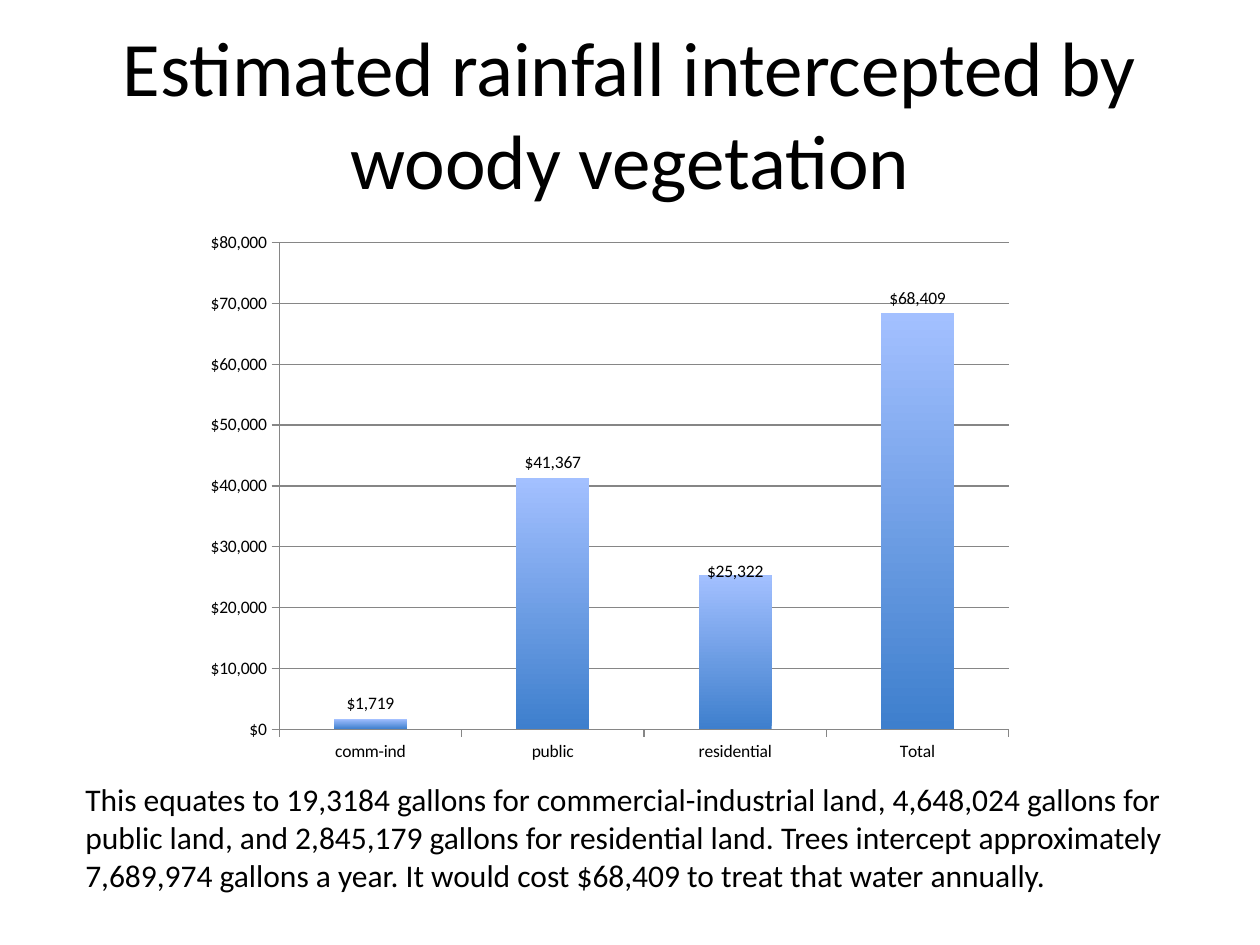
import pptx
import pptx.chart.data
import pptx.dml.color
import pptx.enum.chart
import pptx.enum.text
import pptx.oxml
import pptx.oxml.ns
import pptx.util

FONT = "Calibri"
BLACK = "000000"
AXIS_GREY = "868686"
BAR_BOTTOM = "3E7FCD"
BAR_TOP = "A3C0FF"
DOLLARS = '"$"#,##0'
TITLE = "Estimated rainfall intercepted by woody vegetation"
SUMMARY = (
    "This equates to 19,3184 gallons for commercial-industrial land, "
    "4,648,024 gallons for public land, and 2,845,179 gallons for residential land. "
    "Trees intercept approximately 7,689,974 gallons a year. "
    "It would cost $68,409 to treat that water annually."
)
TREATMENT_COSTS = {"comm-ind": 1719, "public": 41367, "residential": 25322, "Total": 68409}


def colour(hex_text):
    """Turn a hex string into a colour."""
    return pptx.dml.color.RGBColor.from_string(hex_text)


def lengths(box):
    """Turn a left, top, width, height box in centimetres into lengths."""
    return [pptx.util.Cm(value) for value in box]


def format_font(font, size, hex_text=BLACK):
    """Set the typeface, size and colour of a font."""
    font.name = FONT
    font.size = pptx.util.Pt(size)
    font.color.rgb = colour(hex_text)


def write_text(frame, text, size, align, anchor):
    """Fill a text frame with one formatted paragraph."""
    frame.word_wrap = True
    frame.vertical_anchor = anchor
    para = frame.paragraphs[0]
    para.alignment = align
    span = para.add_run()
    span.text = text
    format_font(span.font, size)


def place_title(page, box):
    """Move the title placeholder to the box and write the title."""
    title = page.shapes.title
    title.left, title.top, title.width, title.height = lengths(box)
    write_text(title.text_frame, TITLE, size=44,
               align=pptx.enum.text.PP_ALIGN.CENTER,
               anchor=pptx.enum.text.MSO_ANCHOR.MIDDLE)


def format_axes(chart):
    """Format both axes and the gridlines."""
    costs = chart.value_axis
    costs.minimum_scale, costs.maximum_scale, costs.major_unit = 0, 80000, 10000
    costs.has_major_gridlines = True
    costs.tick_labels.number_format = DOLLARS
    costs.tick_labels.number_format_is_linked = False
    for axis in (costs, chart.category_axis):
        axis.major_tick_mark = pptx.enum.chart.XL_TICK_MARK.OUTSIDE
    for line in (costs.format.line, chart.category_axis.format.line,
                 costs.major_gridlines.format.line):
        line.color.rgb = colour(AXIS_GREY)
        line.width = pptx.util.Pt(0.75)


def format_bars(series):
    """Give the bars a vertical gradient and dollar labels."""
    fill = series.format.fill
    fill.gradient()
    fill.gradient_angle = 90
    for stop, hex_text in zip(fill.gradient_stops, (BAR_BOTTOM, BAR_TOP)):
        stop.color.rgb = colour(hex_text)
    labels = series.data_labels
    labels.show_value = True
    labels.number_format = DOLLARS
    labels.number_format_is_linked = False
    labels.position = pptx.enum.chart.XL_LABEL_POSITION.OUTSIDE_END
    format_font(labels.font, 10)


def lower_label(series, index, shift):
    """Move one data label down by a fraction of the chart height."""
    label = series.points[index].data_label
    label.position = pptx.enum.chart.XL_LABEL_POSITION.OUTSIDE_END
    format_font(label.font, 10)
    layout = pptx.oxml.parse_xml(
        f'<c:layout {pptx.oxml.ns.nsdecls("c")}><c:manualLayout>'
        f'<c:x val="0"/><c:y val="{shift}"/></c:manualLayout></c:layout>')
    series._element.xpath(f"c:dLbls/c:dLbl/c:idx[@val='{index}']")[0].addnext(layout)


def place_chart(page, box):
    """Draw the treatment cost columns in the box."""
    data = pptx.chart.data.CategoryChartData(number_format=DOLLARS)
    data.categories = list(TREATMENT_COSTS)
    data.add_series("Series 1", list(TREATMENT_COSTS.values()))
    kind = pptx.enum.chart.XL_CHART_TYPE.COLUMN_CLUSTERED
    chart = page.shapes.add_chart(kind, *lengths(box), data).chart
    chart.has_legend = False
    chart.has_title = False
    format_font(chart.font, 10)
    format_axes(chart)
    plot = chart.plots[0]
    plot.gap_width = 150
    plot.vary_by_categories = False
    format_bars(plot.series[0])
    lower_label(plot.series[0], index=2, shift=0.02)


def place_summary(page, box):
    """Write the summary paragraph in the box."""
    frame = page.shapes.add_textbox(*lengths(box)).text_frame
    write_text(frame, SUMMARY, size=18,
               align=pptx.enum.text.PP_ALIGN.LEFT,
               anchor=pptx.enum.text.MSO_ANCHOR.TOP)
    frame.auto_size = pptx.enum.text.MSO_AUTO_SIZE.SHAPE_TO_FIT_TEXT


def main():
    """Build the slide and save the deck."""
    deck = pptx.Presentation()
    deck.slide_width, deck.slide_height = pptx.util.Cm(25.4), pptx.util.Cm(19.05)
    page = deck.slides.add_slide(deck.slide_layouts.get_by_name("Title Only"))
    place_title(page, (1.27, 0.05, 22.86, 4.42))
    place_chart(page, (3.91, 4.47, 16.76, 11.1))
    place_summary(page, (1.47, 15.6, 23.14, 2.57))
    deck.save("out.pptx")


if __name__ == "__main__":
    main()
